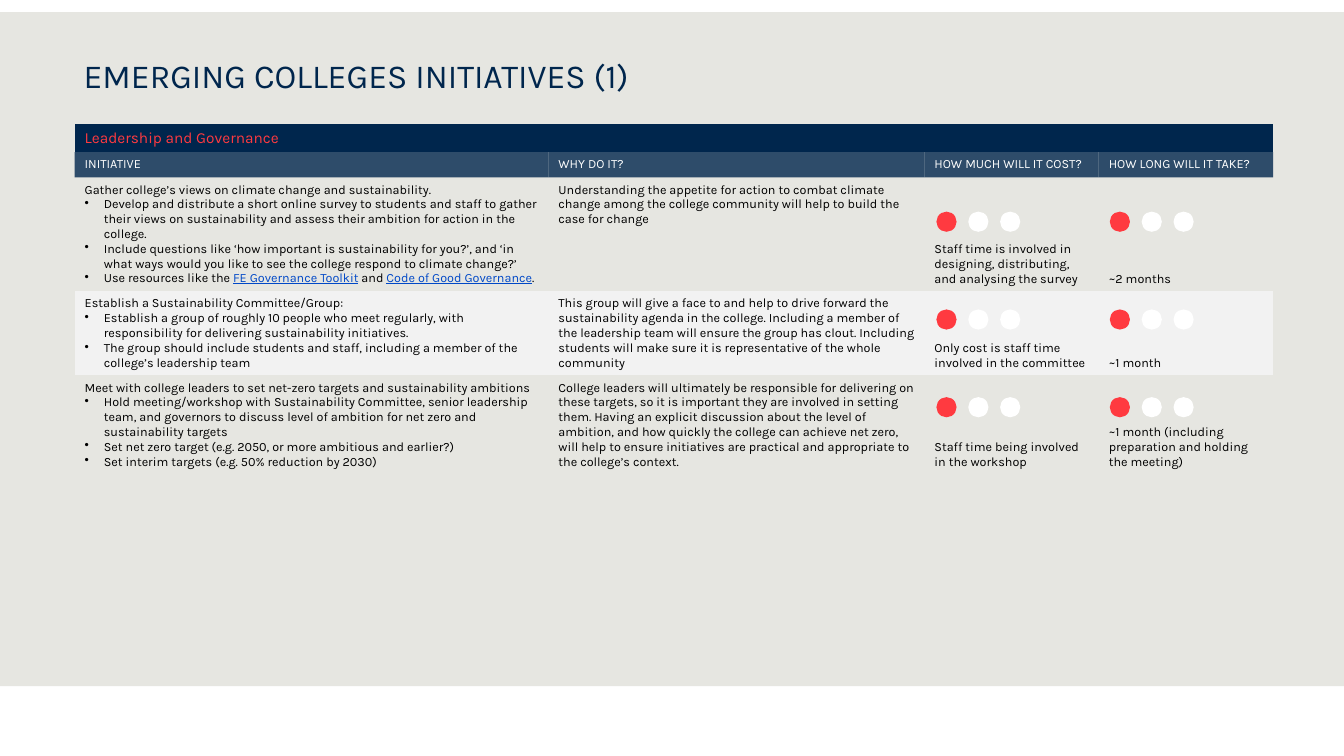
"""Build the slide of emerging colleges initiatives."""
import dataclasses

import lxml.etree
import pptx
import pptx.dml.color
import pptx.enum.shapes
import pptx.enum.text
import pptx.oxml.ns
import pptx.util


@dataclasses.dataclass(frozen=True)
class Theme:
    font: str = "Karla"
    navy: str = "00264D"
    red: str = "FF3A40"
    sand: str = "E6E6E1"
    white: str = "FFFFFF"
    pale: str = "F2F2F2"
    black: str = "000000"
    link: str = "0048C7"
    title: float = 24
    band: float = 11
    body: float = 9


COLS, ROWS = 133.33, 75
WIDTHS = [47, 37.3, 17.3, 17.3]
HEADS = ["INITIATIVE", "WHY DO IT?", "HOW MUCH WILL IT COST?", "HOW LONG WILL IT TAKE?"]
ITEMS = [
    [
        [
            "Gather college’s views on climate change and sustainability.",
            "Develop and distribute a short online survey to students and staff to gather their views on sustainability and assess their ambition for action in the college.",
            "Include questions like ‘how important is sustainability for you?’, and ‘in what ways would you like to see the college respond to climate change?’",
            "Use resources like the |FE Governance Toolkit| and |Code of Good Governance|.",
        ],
        ["Understanding the appetite for action to combat climate change among the college community will help to build the case for change"],
        ["Staff time is involved in designing, distributing, and analysing the survey"],
        ["~2 months"],
    ],
    [
        [
            "Establish a Sustainability Committee/Group:",
            "Establish a group of roughly 10 people who meet regularly, with responsibility for delivering sustainability initiatives.",
            "The group should include students and staff, including a member of the college’s leadership team",
        ],
        ["This group will give a face to and help to drive forward the sustainability agenda in the college. Including a member of the leadership team will ensure the group has clout. Including students will make sure it is representative of the whole community"],
        ["Only cost is staff time involved in the committee"],
        ["~1 month"],
    ],
    [
        [
            "Meet with college leaders to set net-zero targets and sustainability ambitions",
            "Hold meeting/workshop with Sustainability Committee, senior leadership team, and governors to discuss level of ambition for net zero and sustainability targets",
            "Set net zero target (e.g. 2050, or more ambitious and earlier?)",
            "Set interim targets (e.g. 50% reduction by 2030)",
        ],
        ["College leaders will ultimately be responsible for delivering on these targets, so it is important they are involved in setting them. Having an explicit discussion about the level of ambition, and how quickly the college can achieve net zero, will help to ensure initiatives are practical and appropriate to the college’s context."],
        ["Staff time being involved in the workshop"],
        ["~1 month (including preparation and holding the meeting)"],
    ],
]
TALLS = [2.8, 2.5, 11.3, 8.3, 9.6, 8.9]
DOT_TOPS = [21, 30.7, 39.4]
DOT_LEFTS = [92.9, 110.1]
NO_GRID = "{2D5ABB26-0587-4C30-8999-92F81FD0307C}"


def tint(color):
    return pptx.dml.color.RGBColor.from_string(color)


def write(para, text, *, theme, size, color, bullet=False):
    if bullet:
        props = para._p.get_or_add_pPr()
        inset = pptx.util.Inches(0.19)
        props.set("marL", str(inset))
        props.set("indent", str(-inset))
        mark = lxml.etree.SubElement(props, pptx.oxml.ns.qn("a:buChar"))
        mark.set("char", "•")
    for spot, part in enumerate(text.split("|")):
        linked = spot % 2 == 1
        run = para.add_run()
        run.text = part
        run.font.name = theme.font
        run.font.size = pptx.util.Pt(size)
        run.font.underline = linked
        run.font.color.rgb = tint(theme.link if linked else color)


class Board:
    """Hold the theme and the current slide, and place elements on its grid."""

    def __init__(self, deck, theme):
        self.theme = theme
        self.wide = deck.slide_width / COLS
        self.tall = deck.slide_height / ROWS
        self.slide = deck.slides.add_slide(deck.slide_layouts[6])

    def place(self, left, top, width, height):
        return (round(left * self.wide), round(top * self.tall),
                round(width * self.wide), round(height * self.tall))

    def shape(self, kind, box, color):
        item = self.slide.shapes.add_shape(kind, *self.place(*box))
        item.shadow.inherit = False
        item.fill.solid()
        item.fill.fore_color.rgb = tint(color)
        item.line.fill.background()

    def block(self, box, color):
        self.shape(pptx.enum.shapes.MSO_SHAPE.RECTANGLE, box, color)

    def dots(self, left, top):
        for step in range(3):
            color = self.theme.white if step else self.theme.red
            self.shape(pptx.enum.shapes.MSO_SHAPE.OVAL, (left + 3.16 * step, top, 2, 2), color)

    def title(self, box, text):
        frame = self.slide.shapes.add_textbox(*self.place(*box)).text_frame
        frame.word_wrap = True
        frame.margin_top = pptx.util.Inches(0.07)
        write(frame.paragraphs[0], text, theme=self.theme,
              size=self.theme.title, color=self.theme.navy)

    def table(self, left, top, widths, talls):
        box = self.place(left, top, sum(widths), sum(talls))
        table = self.slide.shapes.add_table(len(talls), len(widths), *box).table
        table.first_row = table.horz_banding = False
        table._tbl.tblPr.find(pptx.oxml.ns.qn("a:tableStyleId")).text = NO_GRID
        for column, width in zip(table.columns, widths):
            column.width = round(width * self.wide)
        for row, tall in zip(table.rows, talls):
            row.height = round(tall * self.tall)
        for cell in table.iter_cells():
            cell.fill.background()
        return table

    def cell(self, cell, lines, *, size=None, color=None, fill=None, alpha=None, low=False):
        if fill:
            cell.fill.solid()
            cell.fill.fore_color.rgb = tint(fill)
        if alpha:
            shade = cell._tc.tcPr.find(".//" + pptx.oxml.ns.qn("a:srgbClr"))
            lxml.etree.SubElement(shade, pptx.oxml.ns.qn("a:alpha")).set("val", str(alpha * 1000))
        if low:
            cell.vertical_anchor = pptx.enum.text.MSO_ANCHOR.BOTTOM
        frame = cell.text_frame
        for spot, line in enumerate(lines):
            para = frame.add_paragraph() if spot else frame.paragraphs[0]
            write(para, line, theme=self.theme, size=size or self.theme.body,
                  color=color or self.theme.black, bullet=spot > 0)


def main():
    deck = pptx.Presentation()
    deck.slide_width = pptx.util.Inches(13.33)
    deck.slide_height = pptx.util.Inches(7.5)
    theme = Theme()
    board = Board(deck, theme)
    board.block((0, 1.2, COLS, 66.9), theme.sand)

    table = board.table(7.4, 12.3, WIDTHS, TALLS)
    band = table.cell(0, 0)
    band.merge(table.cell(0, len(WIDTHS) - 1))
    board.cell(band, ["Leadership and Governance"], size=theme.band,
               color=theme.red, fill=theme.navy)
    for col, head in enumerate(HEADS):
        board.cell(table.cell(1, col), [head], color=theme.white, fill=theme.navy, alpha=80)
    for row, item in enumerate(ITEMS):
        for col, lines in enumerate(item):
            board.cell(table.cell(row + 2, col), lines,
                       fill=theme.pale if row % 2 else None, low=col > 1)

    for top in DOT_TOPS:
        for left in DOT_LEFTS:
            board.dots(left, top)
    board.title((7.3, 4.7, 118.7, 5.7), "EMERGING COLLEGES INITIATIVES (1)")
    board.block((0, 68.1, COLS, 6.9), theme.white)
    deck.save("out.pptx")


if __name__ == "__main__":
    main()
